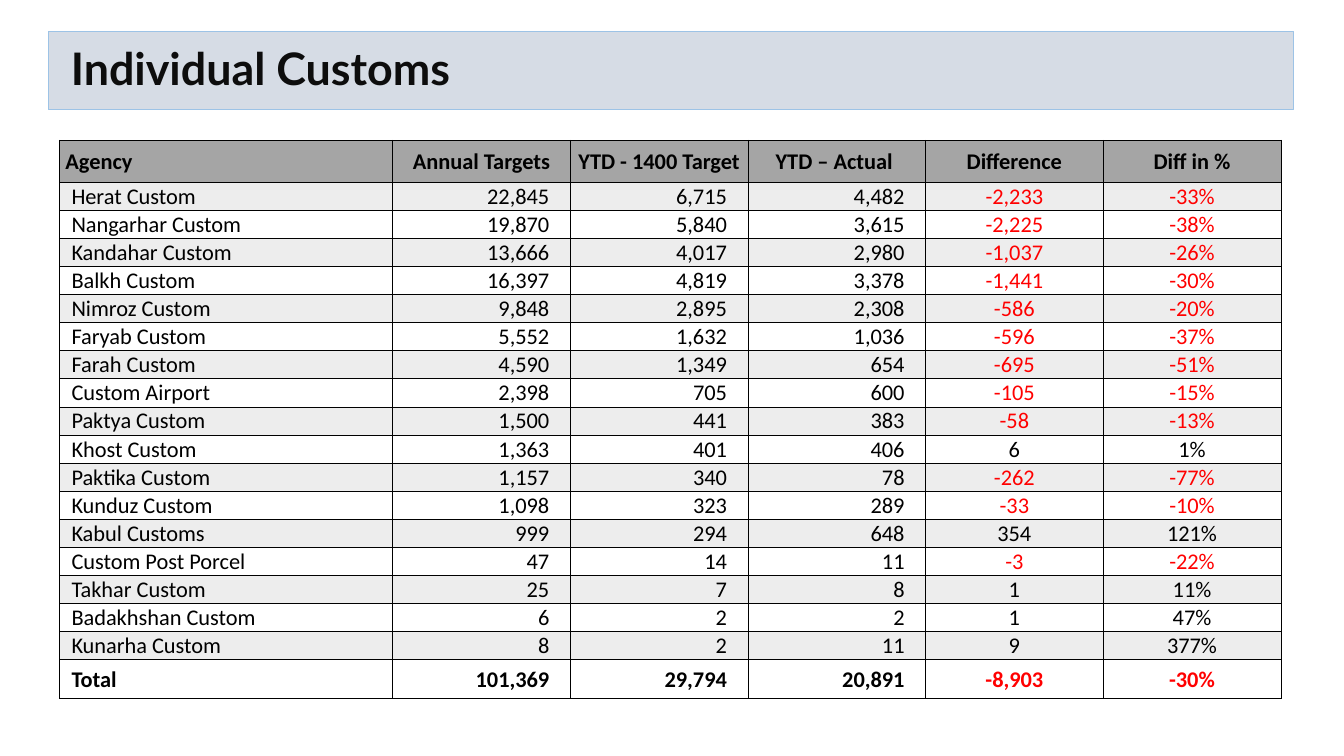
"""Build the Individual Customs slide: a title bar and a table of agency targets."""
from lxml import etree
from pptx import Presentation
from pptx import util as u
from pptx.dml.color import RGBColor
from pptx.enum import shapes, text
from pptx.oxml.ns import qn

TITLE = "Individual Customs"
HEADER = ("Agency", "Annual Targets", "YTD - 1400 Target", "YTD – Actual ", "Difference", "Diff in %")
AGENCIES = [
    ("Herat Custom", "22,845", "6,715", "4,482", "-2,233", "-33%"),
    ("Nangarhar Custom", "19,870", "5,840", "3,615", "-2,225", "-38%"),
    ("Kandahar Custom", "13,666", "4,017", "2,980", "-1,037", "-26%"),
    ("Balkh Custom", "16,397", "4,819", "3,378", "-1,441", "-30%"),
    ("Nimroz Custom", "9,848", "2,895", "2,308", "-586", "-20%"),
    ("Faryab Custom", "5,552", "1,632", "1,036", "-596", "-37%"),
    ("Farah Custom", "4,590", "1,349", "654", "-695", "-51%"),
    ("Custom Airport", "2,398", "705", "600", "-105", "-15%"),
    ("Paktya Custom", "1,500", "441", "383", "-58", "-13%"),
    ("Khost Custom", "1,363", "401", "406", "6", "1%"),
    ("Paktika Custom", "1,157", "340", "78", "-262", "-77%"),
    ("Kunduz Custom", "1,098", "323", "289", "-33", "-10%"),
    ("Kabul Customs", "999", "294", "648", "354", "121%"),
    ("Custom Post Porcel", "47", "14", "11", "-3", "-22%"),
    ("Takhar Custom", "25", "7", "8", "1", "11%"),
    ("Badakhshan Custom", "6", "2", "2", "1", "47%"),
    ("Kunarha Custom", "8", "2", "11", "9", "377%"),
]
TOTAL = ("Total", "101,369", "29,794", "20,891", "-8,903", "-30%")

THEME = {
    "title_font": "Lato", "table_font": "Calibri", "title_size": 32, "table_size": 16,
    "title": "0D0D0D", "ink": "000000", "negative": "FF0000",
    "bar": "D6DCE5", "bar_line": "9DC3E6", "header": "A5A5A5", "band": "EDEDED",
}
BAR = (34.6, 22.3, 889.2, 56.2)
TABLE_LEFT, TABLE_TOP = 42.5, 100.1
COLUMN_WIDTHS = [238] + [126.9] * 5
ROW_HEIGHTS = [30] + [20.05] * len(AGENCIES) + [27.6]
LEFT, CENTER, RIGHT = text.PP_ALIGN.LEFT, text.PP_ALIGN.CENTER, text.PP_ALIGN.RIGHT


def paint(fill, color):
    fill.solid()
    fill.fore_color.rgb = RGBColor.from_string(color)


def write(frame, words, *, font, size, color, bold=False, align=LEFT, spacing=None):
    para = frame.paragraphs[0]
    para.alignment = align
    if spacing:
        para.line_spacing = spacing
    span = para.add_run()
    span.text = words
    span.font.name, span.font.size, span.font.bold = font, u.Pt(size), bold
    span.font.color.rgb = RGBColor.from_string(color)


def outline(cell, color, width):
    properties = cell._tc.get_or_add_tcPr()
    for side in ("lnL", "lnR", "lnT", "lnB"):
        line = etree.SubElement(properties, qn(f"a:{side}"), w=str(u.Pt(width)))
        solid = etree.SubElement(line, qn("a:solidFill"))
        etree.SubElement(solid, qn("a:srgbClr"), val=color)


def add_title(page):
    bar = page.shapes.add_shape(shapes.MSO_SHAPE.RECTANGLE, *map(u.Pt, BAR))
    bar.shadow.inherit = False
    paint(bar.fill, THEME["bar"])
    bar.line.color.rgb = RGBColor.from_string(THEME["bar_line"])
    bar.line.width = u.Pt(0.75)
    frame = bar.text_frame
    frame.word_wrap = True
    frame.margin_left = u.Pt(16)
    frame.vertical_anchor = text.MSO_ANCHOR.MIDDLE
    write(frame, TITLE, font=THEME["title_font"], size=THEME["title_size"],
          color=THEME["title"], bold=True, spacing=0.9)


def add_customs_table(page):
    rows = [HEADER, *AGENCIES, TOTAL]
    last = len(rows) - 1
    area = (TABLE_LEFT, TABLE_TOP, sum(COLUMN_WIDTHS), sum(ROW_HEIGHTS))
    table = page.shapes.add_table(len(rows), len(HEADER), *map(u.Pt, area)).table
    table.first_row = table.horz_banding = False
    for column, width in zip(table.columns, COLUMN_WIDTHS):
        column.width = u.Pt(width)
    for r, (values, height) in enumerate(zip(rows, ROW_HEIGHTS)):
        table.rows[r].height = u.Pt(height)
        for c, value in enumerate(values):
            cell = table.cell(r, c)
            numeric = r > 0 and 1 <= c <= 3
            align = LEFT if c == 0 else RIGHT if numeric else CENTER
            indent = 4.3 if r == 0 else 8.6
            cell.margin_left = u.Pt(indent if c == 0 else 0.5)
            cell.margin_right = u.Pt(15 if numeric else 0.5)
            cell.margin_top, cell.margin_bottom = u.Pt(0.5), 0
            cell.vertical_anchor = text.MSO_ANCHOR.MIDDLE
            outline(cell, THEME["ink"], 0.5)
            if r == 0:
                paint(cell.fill, THEME["header"])
            elif r % 2 and r < last:
                paint(cell.fill, THEME["band"])
            else:
                cell.fill.background()
            write(cell.text_frame, value, font=THEME["table_font"], size=THEME["table_size"],
                  color=THEME["negative" if value.startswith("-") else "ink"],
                  bold=r in (0, last), align=align)


def main():
    deck = Presentation()
    deck.slide_width, deck.slide_height = u.Pt(960), u.Pt(540)
    page = deck.slides.add_slide(deck.slide_layouts[6])
    add_title(page)
    add_customs_table(page)
    deck.save("out.pptx")


if __name__ == "__main__":
    main()
